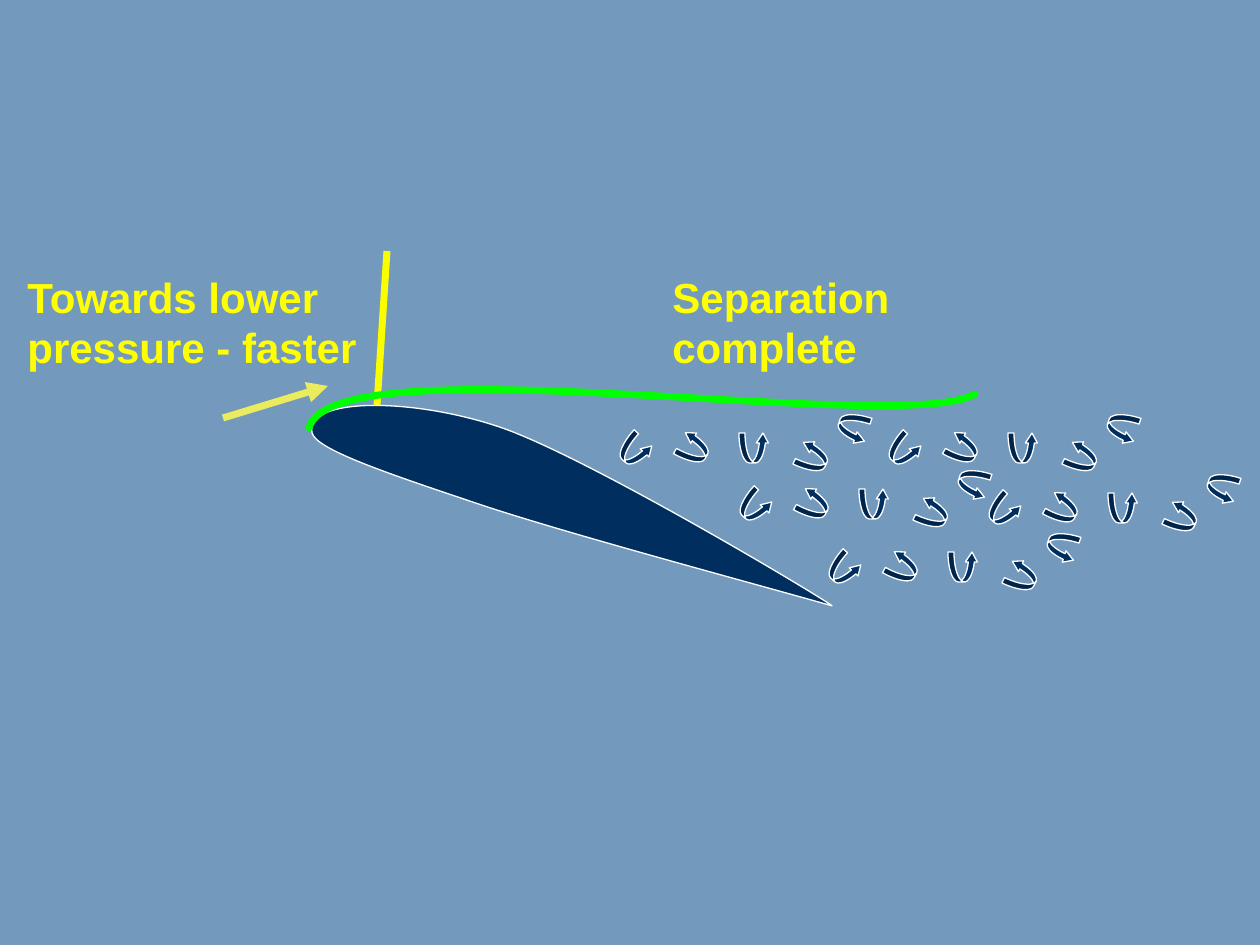
"""Build a slide of airflow separating from a stalled wing section."""
import math
from dataclasses import dataclass

from lxml import etree
from pptx import Presentation
from pptx import util as u
from pptx.dml.color import RGBColor
from pptx.enum import shapes, text
from pptx.oxml.ns import qn

SCALE = 914400 / 126


@dataclass(frozen=True)
class Theme:
    sky: str = "739ABC"
    navy: str = "002F5F"
    edge: str = "FFFFFF"
    label: str = "FFFF00"
    arrow: str = "EAEC5E"
    post: str = "FAFD00"
    flow: str = "00FF00"
    font: str = "Arial"
    size: int = 24
    thin: float = 0.75
    thick: int = 4


THEME = Theme()
WING = [(312, 433), (305, 397), (413, 398), (499, 427), (586, 456),
        (829, 602), (832, 606), (766, 587), (564, 533), (478, 504),
        (392, 475), (316, 450), (312, 433)]
PIVOT, TILT = (571, 493), 18.5
STREAM = [(309, 428), (334, 340), (901, 437), (975, 394)]
EDDIES = [(679, 433), (799, 489), (888, 552), (948, 433), (1048, 493)]
SWIRL = [(0, 0, 299.5), (60, 0, 0), (119, 9, 295.8), (-59, 3, 42.6),
         (159, -20, 108.2)]


def px(n):
    return u.Emu(round(n * SCALE))


def rgb(code):
    return RGBColor.from_string(code)


def stroke(item, color, width):
    item.line.color.rgb = rgb(color)
    item.line.width = u.Pt(width)


def paint(shape):
    shape.shadow.inherit = False
    shape.fill.solid()
    shape.fill.fore_color.rgb = rgb(THEME.navy)
    stroke(shape, THEME.edge, THEME.thin)


def line(slide, start, end, color, head=False):
    link = slide.shapes.add_connector(
        shapes.MSO_CONNECTOR.STRAIGHT, *map(px, start + end))
    stroke(link, color, THEME.thick)
    etree.SubElement(link._element.spPr, qn("a:effectLst"))
    if head:
        etree.SubElement(link.line._get_or_add_ln(), qn("a:tailEnd"),
                         type="triangle")


def curve(slide, points, close=False):
    """Draw cubic curves through a start point and triples of control points."""
    first, *rest = [(px(x), px(y)) for x, y in points]
    pen = slide.shapes.build_freeform(*first)
    pen.add_line_segments(rest, close=close)
    shape = pen.convert_to_shape()
    route = shape._element.find(".//" + qn("a:path"))
    steps = route.findall(qn("a:lnTo"))[:len(rest)]
    for i in range(0, len(steps), 3):
        bend = etree.Element(qn("a:cubicBezTo"))
        steps[i].addprevious(bend)
        for step in steps[i:i + 3]:
            bend.append(step[0])
            route.remove(step)
    return shape


def turn(point, angle):
    dx, dy = point[0] - PIVOT[0], point[1] - PIVOT[1]
    cos, sin = math.cos(math.radians(angle)), math.sin(math.radians(angle))
    return PIVOT[0] + dx * cos - dy * sin, PIVOT[1] + dx * sin + dy * cos


def wing(slide):
    shape = curve(slide, [turn(p, -TILT) for p in WING], close=True)
    shape.rotation = TILT
    paint(shape)


def stream(slide):
    shape = curve(slide, STREAM)
    shape.shadow.inherit = False
    shape.fill.background()
    stroke(shape, THEME.flow, THEME.thick)
    shape.line._get_or_add_ln().set("cap", "rnd")


def eddy(slide, left, top):
    for dx, dy, angle in SWIRL:
        shape = slide.shapes.add_shape(
            shapes.MSO_SHAPE.CURVED_UP_ARROW,
            *map(px, (left + dx, top + dy, 30, 30)))
        for i, value in enumerate((0.2, 0.4, 0.333)):
            shape.adjustments[i] = value
        shape.rotation = angle
        paint(shape)


def label(slide, box, words):
    frame = slide.shapes.add_textbox(*map(px, box)).text_frame
    frame.text = words
    frame.word_wrap = False
    frame.auto_size = text.MSO_AUTO_SIZE.SHAPE_TO_FIT_TEXT
    for para in frame.paragraphs:
        for run in para.runs:
            run.font.name = THEME.font
            run.font.size = u.Pt(THEME.size)
            run.font.bold = True
            run.font.color.rgb = rgb(THEME.label)


def main():
    deck = Presentation()
    deck.slide_width, deck.slide_height = px(1260), px(945)
    slide = deck.slides.add_slide(deck.slide_layouts[6])
    slide.background.fill.solid()
    slide.background.fill.fore_color.rgb = rgb(THEME.sky)
    line(slide, (223, 418), (328, 386), THEME.arrow, head=True)
    label(slide, (660, 265, 256, 115), "Separation\ncomplete")
    line(slide, (377, 406), (387, 251), THEME.post)
    wing(slide)
    stream(slide)
    for left, top in EDDIES:
        eddy(slide, left, top)
    label(slide, (15, 265, 358, 115), "Towards lower\npressure - faster")
    deck.save("out.pptx")


if __name__ == "__main__":
    main()
